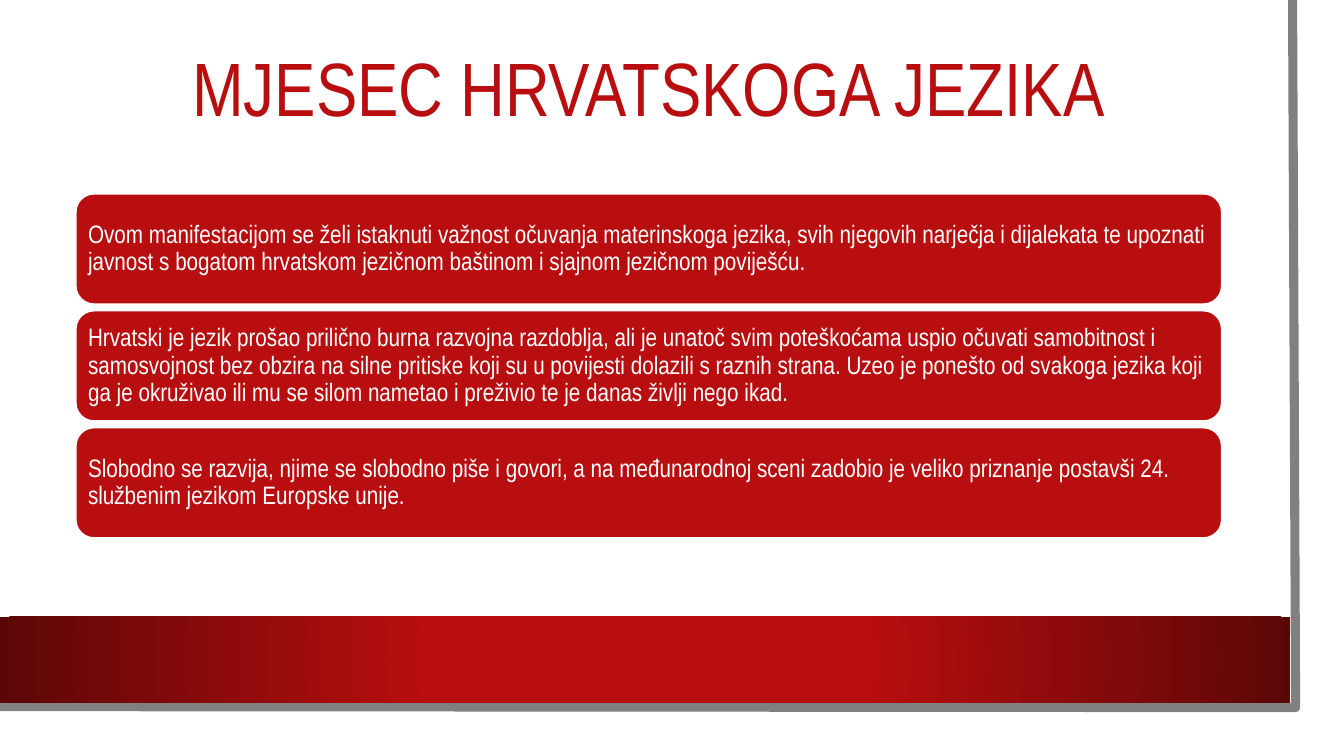
"""Build the slide about the month of the Croatian language."""
from lxml import etree
from pptx import Presentation
from pptx.dml.color import RGBColor
from pptx.enum.shapes import MSO_SHAPE
from pptx.enum.text import MSO_ANCHOR, PP_ALIGN
from pptx.oxml.ns import qn
from pptx.util import Inches, Pt

RED, DARK_RED, WHITE, GRAY = "B80E0F", "5C0707", "FFFFFF", "808080"
STATEMENTS = [
    "Ovom manifestacijom se želi istaknuti važnost očuvanja materinskoga jezika, "
    "svih njegovih narječja i dijalekata te upoznati javnost s bogatom hrvatskom "
    "jezičnom baštinom i sjajnom jezičnom poviješću.",
    "Hrvatski je jezik prošao prilično burna razvojna razdoblja, ali je unatoč svim "
    "poteškoćama uspio očuvati samobitnost i samosvojnost bez obzira na silne pritiske "
    "koji su u povijesti dolazili s raznih strana. Uzeo je ponešto od svakoga jezika "
    "koji ga je okruživao ili mu se silom nametao i preživio te je danas življi nego ikad.",
    "Slobodno se razvija, njime se slobodno piše i govori, a na međunarodnoj sceni "
    "zadobio je veliko priznanje postavši 24. službenim jezikom Europske unije.",
]


def color(value):
    return RGBColor.from_string(value)


def write(shape, text, size, text_color, alignment):
    text_frame = shape.text_frame
    text_frame.text = text
    text_frame.word_wrap = True
    text_frame.vertical_anchor = MSO_ANCHOR.MIDDLE
    paragraph = text_frame.paragraphs[0]
    paragraph.alignment = alignment
    paragraph.line_spacing = 0.9
    font = paragraph.runs[0].font
    font.name = "Arial Narrow"
    font.size = Pt(size)
    font.color.rgb = color(text_color)


presentation = Presentation()
presentation.slide_width = Inches(13.33)
presentation.slide_height = Inches(7.5)
slide = presentation.slides.add_slide(presentation.slide_layouts[6])
shapes = slide.shapes

sheet = shapes.add_shape(MSO_SHAPE.RECTANGLE, 0, 0, Inches(13.1), Inches(7.27))
sheet.shadow.inherit = False
sheet.fill.solid()
sheet.fill.fore_color.rgb = color(WHITE)
sheet.line.fill.background()

builder = shapes.build_freeform(Inches(12.82), 0)
builder.add_line_segments(
    [(Inches(12.85), Inches(7.02)), (Inches(-0.03), Inches(7.01))], close=False
)
edge = builder.convert_to_shape()
edge.shadow.inherit = False
edge.fill.background()
edge.line.color.rgb = color(GRAY)
edge.line.width = Pt(6.5)

band = shapes.add_shape(MSO_SHAPE.RECTANGLE, 0, Inches(6.12), Inches(12.8), Inches(0.85))
band.shadow.inherit = False
band.line.fill.background()
band.fill.gradient()
for stop, position, stop_color in zip(band.fill.gradient_stops, (0.34, 1), (RED, DARK_RED)):
    stop.position = position
    stop.color.rgb = color(stop_color)
gradient = band.element.spPr.find(qn("a:gradFill"))
gradient.remove(gradient.find(qn("a:lin")))
radial = etree.SubElement(gradient, qn("a:path"), path="circle")
etree.SubElement(radial, qn("a:fillToRect"), l="50000", t="50000", r="50000", b="50000")

title = shapes.add_textbox(Inches(0.75), Inches(0.28), Inches(11.37), Inches(1.26))
write(title, "MJESEC HRVATSKOGA JEZIKA", 54, RED, PP_ALIGN.CENTER)

for index, statement in enumerate(STATEMENTS):
    card = shapes.add_shape(
        MSO_SHAPE.ROUNDED_RECTANGLE,
        Inches(0.75), Inches(1.92 + 1.16 * index), Inches(11.37), Inches(1.1),
    )
    card.shadow.inherit = False
    card.fill.solid()
    card.fill.fore_color.rgb = color(RED)
    card.line.color.rgb = color(WHITE)
    card.line.width = Pt(1.5)
    card.text_frame.margin_left = card.text_frame.margin_right = Inches(0.07)
    write(card, statement, 18, WHITE, PP_ALIGN.LEFT)

presentation.save("out.pptx")
